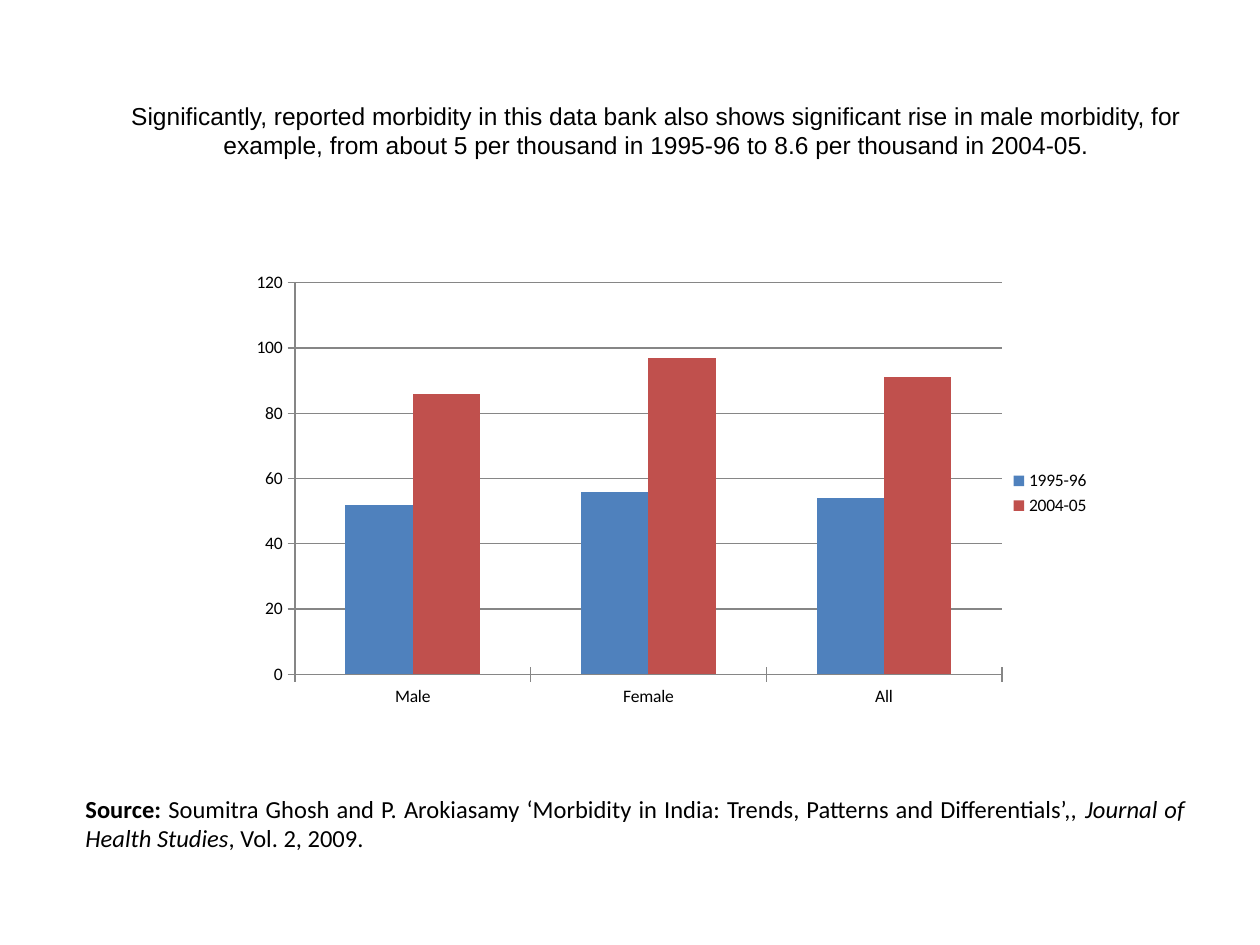
from lxml.etree import SubElement
from pptx import Presentation
from pptx.chart.data import CategoryChartData
from pptx.dml.color import RGBColor
from pptx.enum.chart import XL_CHART_TYPE as ChartType, XL_LEGEND_POSITION as LegendSide
from pptx.enum.chart import XL_TICK_MARK as Tick
from pptx.enum.text import MSO_AUTO_SIZE as AutoSize, PP_ALIGN as Align
from pptx.oxml.ns import qn
from pptx.util import Inches, Pt

BLACK, GREY = "000000", "868686"
FINDING = [("Significantly, reported morbidity in this data bank also shows significant rise "
            "in male morbidity, for example, from about 5 per thousand in 1995-96 to "
            "8.6 per thousand in 2004-05.", "")]
SOURCE = [
    ("Source: ", "bold"),
    ("Soumitra Ghosh and P. Arokiasamy ‘Morbidity in India: Trends, Patterns and Differentials’,, ", ""),
    ("Journal of Health Studies", "italic"),
    (", Vol. 2, 2009. ", ""),
]
TEXTS = [
    (FINDING, "Arial", Align.CENTER, (0.92, 0.75, 8.58, 0.81)),
    (SOURCE, "Calibri", Align.JUSTIFY, (0.58, 6.25, 8.92, 0.88)),
]
GROUPS = ["Male", "Female", "All"]
PERIODS = [("1995-96", (52, 56, 54), "4F81BD"), ("2004-05", (86, 97, 91), "C0504D")]
CHART_AREA = (1.5, 2, 7.25, 3.83)
PLOT_SHARES = {"x": 0.116, "y": 0.064, "w": 0.774, "h": 0.811}


def color(value):
    return RGBColor.from_string(value)


def style_font(font, name, size):
    font.name, font.size = name, Pt(size)
    font.color.rgb = color(BLACK)


def style_line(line):
    line.color.rgb, line.width = color(GREY), Pt(0.75)


def add_text(page, runs, font_name, align, area):
    box = page.shapes.add_textbox(*map(Inches, area))
    frame = box.text_frame
    frame.word_wrap, frame.auto_size = True, AutoSize.SHAPE_TO_FIT_TEXT
    para = frame.paragraphs[0]
    para.alignment = align
    for text, emphasis in runs:
        span = para.add_run()
        span.text = text
        style_font(span.font, font_name, 14)
        span.font.bold, span.font.italic = emphasis == "bold", emphasis == "italic"


def place_plot(chart):
    plot_area = chart.plots[0]._element.getparent()
    layout = plot_area.find(qn("c:layout"))
    if layout is None:
        layout = SubElement(plot_area, qn("c:layout"))
        plot_area.insert(0, layout)
    manual = SubElement(layout, qn("c:manualLayout"))
    settings = {"layoutTarget": "inner", "xMode": "edge", "yMode": "edge", **PLOT_SHARES}
    for name, value in settings.items():
        SubElement(manual, qn(f"c:{name}")).set("val", str(value))


def add_morbidity_chart(page):
    data = CategoryChartData()
    data.categories = GROUPS
    for name, values, _ in PERIODS:
        data.add_series(name, values)
    chart = page.shapes.add_chart(ChartType.COLUMN_CLUSTERED, *map(Inches, CHART_AREA), data).chart
    style_font(chart.font, "Calibri", 10)
    chart.has_title = False
    chart.has_legend = True
    chart.legend.position, chart.legend.include_in_layout = LegendSide.RIGHT, False

    plot = chart.plots[0]
    plot.gap_width, plot.overlap, plot.vary_by_categories = 150, 0, False
    for series, (_, _, fill) in zip(plot.series, PERIODS):
        series.format.fill.solid()
        series.format.fill.fore_color.rgb = color(fill)

    for axis in (chart.category_axis, chart.value_axis):
        axis.major_tick_mark = Tick.CROSS
        style_line(axis.format.line)
    scale = chart.value_axis
    scale.minimum_scale, scale.maximum_scale, scale.major_unit = 0, 120, 20
    scale.has_major_gridlines = True
    style_line(scale.major_gridlines.format.line)
    place_plot(chart)


def main():
    """Build the morbidity slide and save it."""
    deck = Presentation()
    deck.slide_width, deck.slide_height = Inches(10), Inches(7.5)
    page = deck.slides.add_slide(deck.slide_layouts[6])
    finding, source = TEXTS
    add_text(page, *finding)
    add_morbidity_chart(page)
    add_text(page, *source)
    deck.save("out.pptx")


if __name__ == "__main__":
    main()
